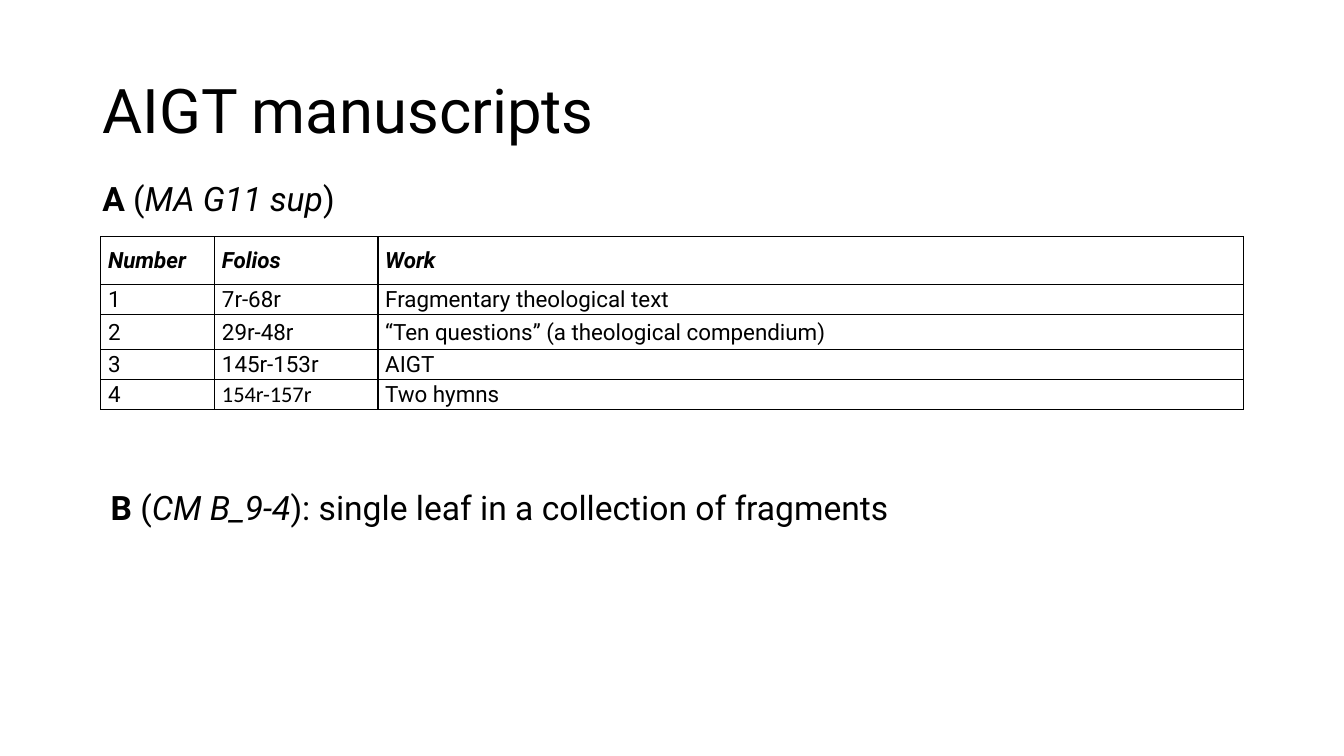
from lxml import etree
from pptx import Presentation
from pptx.dml.color import RGBColor
from pptx.enum import text
from pptx.oxml import ns
from pptx.util import Pt

COLORS = {"ink": "000000", "paper": "FFFFFF"}

presentation = Presentation()
presentation.slide_width, presentation.slide_height = Pt(960), Pt(540)
slide = presentation.slides.add_slide(presentation.slide_layouts[6])
slide.background.fill.solid()
slide.background.fill.fore_color.rgb = RGBColor.from_string(COLORS["paper"])


def write(paragraph, content, size, bold=False, italic=False, font="Roboto"):
    run = paragraph.add_run()
    run.text = content
    run.font.name, run.font.size = font, Pt(size)
    run.font.bold, run.font.italic = bold, italic
    run.font.color.rgb = RGBColor.from_string(COLORS["ink"])


def add_text_box(left, top, width, height, anchor=text.MSO_ANCHOR.TOP):
    """Add a wrapping text box and return its first paragraph."""
    frame = slide.shapes.add_textbox(Pt(left), Pt(top), Pt(width), Pt(height)).text_frame
    frame.word_wrap = True
    frame.vertical_anchor = anchor
    return frame.paragraphs[0]


title = add_text_box(66, 28.75, 828, 104.4, text.MSO_ANCHOR.MIDDLE)
title.line_spacing = 0.9
write(title, "AIGT manuscripts", 44)

# Manuscript headings: siglum, shelfmark, remark
headings = [
    (66, 123.3, 369, "A", "MA G11 sup", ")"),
    (72, 344.3, 868, "B", "CM B_9-4", "): single leaf in a collection of fragments"),
]
for left, top, width, siglum, shelfmark, remark in headings:
    heading = add_text_box(left, top, width, 36)
    write(heading, siglum, 24, bold=True)
    write(heading, " (", 24)
    write(heading, shelfmark, 24, italic=True)
    write(heading, remark, 24)

# Contents of manuscript A
contents = [
    ("Number", "Folios", "Work"),
    ("1", "7r-68r", "Fragmentary theological text"),
    ("2", "29r-48r", "“Ten questions” (a theological compendium)"),
    ("3", "145r-153r", "AIGT"),
    ("4", "154r-157r", "Two hymns"),
]
column_widths = [81.4, 116.6, 618.5]
row_heights = [34, 21.5, 25, 21.5, 21.5]
table = slide.shapes.add_table(
    len(contents), len(column_widths), Pt(72), Pt(169),
    Pt(sum(column_widths)), Pt(sum(row_heights)),
).table
table.horz_banding = False
for column, width in zip(table.columns, column_widths):
    column.width = Pt(width)

for row_index, (entries, height) in enumerate(zip(contents, row_heights)):
    table.rows[row_index].height = Pt(height)
    is_header = row_index == 0
    for column_index, entry in enumerate(entries):
        cell = table.cell(row_index, column_index)
        cell.margin_left = cell.margin_right = Pt(5.2)
        cell.margin_top = cell.margin_bottom = Pt(0)
        cell.vertical_anchor = text.MSO_ANCHOR.MIDDLE
        properties = cell._tc.get_or_add_tcPr()
        for side in ("lnL", "lnR", "lnT", "lnB"):
            border = etree.SubElement(properties, ns.qn(f"a:{side}"), w=str(Pt(1)))
            fill = etree.SubElement(border, ns.qn("a:solidFill"))
            etree.SubElement(fill, ns.qn("a:srgbClr"), val=COLORS["ink"])
        cell.fill.background()
        paragraph = cell.text_frame.paragraphs[0]
        paragraph.alignment = text.PP_ALIGN.JUSTIFY
        paragraph.line_spacing = 1.07
        font = "Calibri" if entry == "154r-157r" else "Roboto"
        write(paragraph, entry, 16, bold=is_header, italic=is_header, font=font)

presentation.save("out.pptx")
